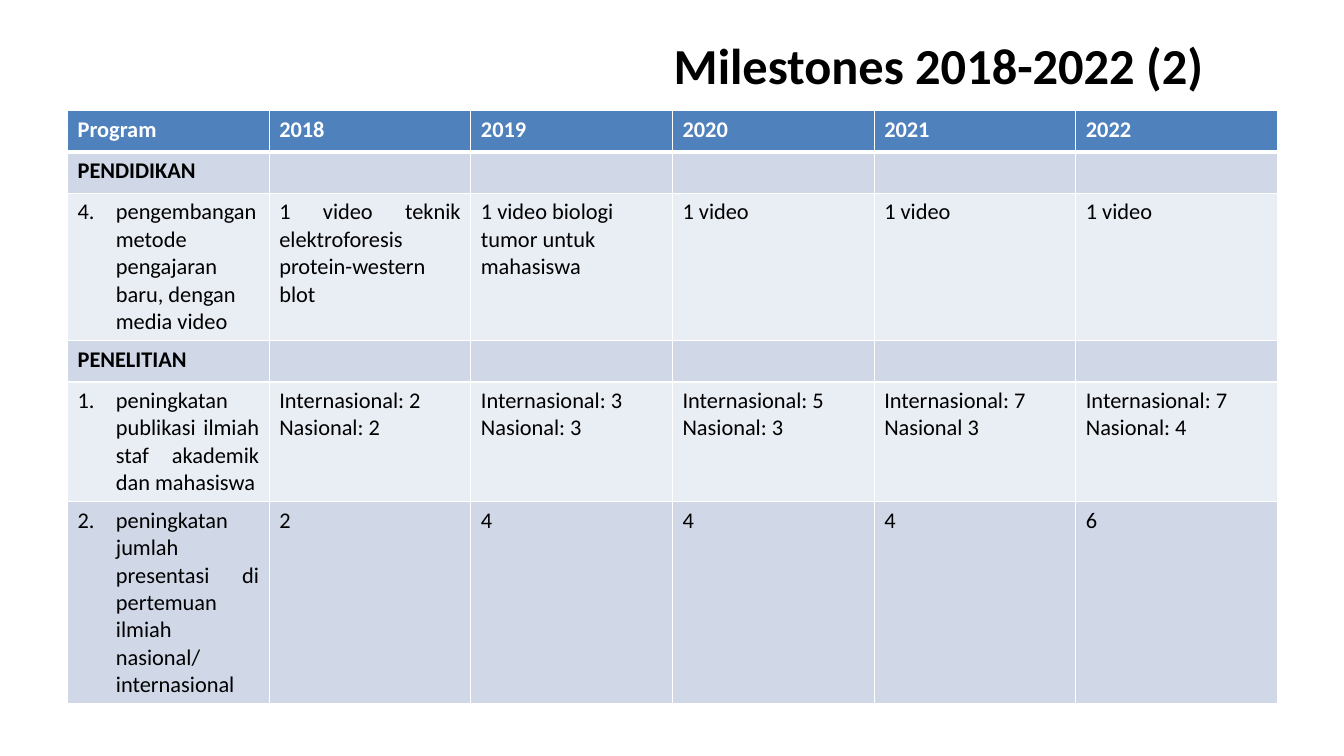
from dataclasses import dataclass

from lxml import etree
from pptx import Presentation
from pptx.dml.color import RGBColor
from pptx.enum.text import MSO_ANCHOR, PP_ALIGN
from pptx.oxml.ns import qn
from pptx.util import Emu, Pt

CENTER, LEFT, JUSTIFY = PP_ALIGN.CENTER, PP_ALIGN.LEFT, PP_ALIGN.JUSTIFY
MIDDLE = MSO_ANCHOR.MIDDLE
FONT = "Calibri"
BLACK, WHITE = "000000", "FFFFFF"
BLUE, DARK, PALE = "4F81BD", "D0D8E8", "E9EDF4"
SCALE = 9144  # EMU per px, 100 px to the inch
COLS = 6


@dataclass
class Cell:
    text: str = ""
    num: int = 0  # list number, 0 for none
    align: PP_ALIGN = LEFT


@dataclass
class Row:
    height: int
    fill: str
    cells: list[Cell]
    color: str = BLACK
    bold: bool = False


def px(num: int) -> Emu:
    return Emu(num * SCALE)


def rgb(code: str) -> RGBColor:
    return RGBColor.from_string(code)


def style(para, size: int, color: str, bold: bool, align: PP_ALIGN) -> None:
    para.alignment = align
    font = para.font
    font.name, font.size, font.bold = FONT, Pt(size), bold
    font.color.rgb = rgb(color)


def number(para, start: int) -> None:
    props = para._p.get_or_add_pPr()
    props.set("marL", str(px(38)))
    props.set("indent", str(px(-38)))
    mark = etree.SubElement(props, qn("a:buAutoNum"), type="arabicPeriod")
    mark.set("startAt", str(start))


def border(cell, widths: dict[str, int]) -> None:
    props = cell._tc.get_or_add_tcPr()
    for side, width in widths.items():
        line = etree.SubElement(props, qn(f"a:ln{side}"), w=str(Pt(width)))
        fill = etree.SubElement(line, qn("a:solidFill"))
        etree.SubElement(fill, qn("a:srgbClr"), val=WHITE)


def plain(*texts: str) -> list[Cell]:
    return [Cell(text) for text in texts]


def group(name: str) -> Row:
    return Row(41, DARK, plain(name, *[""] * (COLS - 1)), bold=True)


ROWS = [
    Row(41, BLUE, plain("Program", *map(str, range(2018, 2023))), WHITE, True),
    group("PENDIDIKAN"),
    Row(146, PALE, [
        Cell("pengembangan metode pengajaran baru, dengan media video", 4),
        Cell("1 video teknik elektroforesis protein-western blot", align=JUSTIFY),
        Cell("1 video biologi tumor untuk mahasiswa"),
        *plain(*["1 video"] * 3),
    ]),
    group("PENELITIAN"),
    Row(119, PALE, [
        Cell("peningkatan publikasi ilmiah staf akademik dan mahasiswa", 1, JUSTIFY),
        *plain("Internasional: 2\nNasional: 2", "Internasional: 3\nNasional: 3",
               "Internasional: 5\nNasional: 3", "Internasional: 7\nNasional 3",
               "Internasional: 7\nNasional: 4"),
    ]),
    Row(199, DARK, [
        Cell("peningkatan jumlah presentasi di pertemuan ilmiah nasional/ internasional",
             2, JUSTIFY),
        *plain("2", "4", "4", "4", "6"),
    ]),
]


def draw_title(slide) -> None:
    title = slide.shapes.title
    title.left, title.top, title.width, title.height = map(px, (595, 30, 672, 68))
    frame = title.text_frame
    frame.text = "Milestones 2018-2022 (2)"
    frame.vertical_anchor = MIDDLE
    style(frame.paragraphs[0], 36, BLACK, True, CENTER)


def draw_cell(cell, item: Cell, row: Row, top: int, base: int) -> None:
    border(cell, {"L": 1, "R": 1, "T": top, "B": base})
    cell.fill.solid()
    cell.fill.fore_color.rgb = rgb(row.fill)
    cell.text = item.text
    for para in cell.text_frame.paragraphs:
        if item.num:
            number(para, item.num)
        style(para, 16, row.color, row.bold, item.align)


def draw_table(slide) -> None:
    high = sum(row.height for row in ROWS)
    table = slide.shapes.add_table(
        len(ROWS), COLS, px(67), px(110), px(1200), px(high)).table
    for r, row in enumerate(ROWS):
        table.rows[r].height = px(row.height)
        # A thick line parts the header from the body
        top, base = 3 if r == 1 else 1, 3 if r == 0 else 1
        for c, item in enumerate(row.cells):
            draw_cell(table.cell(r, c), item, row, top, base)


def main() -> None:
    deck = Presentation()
    deck.slide_width, deck.slide_height = px(1333), px(750)
    slide = deck.slides.add_slide(deck.slide_layouts[5])
    draw_title(slide)
    draw_table(slide)
    deck.save("out.pptx")


if __name__ == "__main__":
    main()
